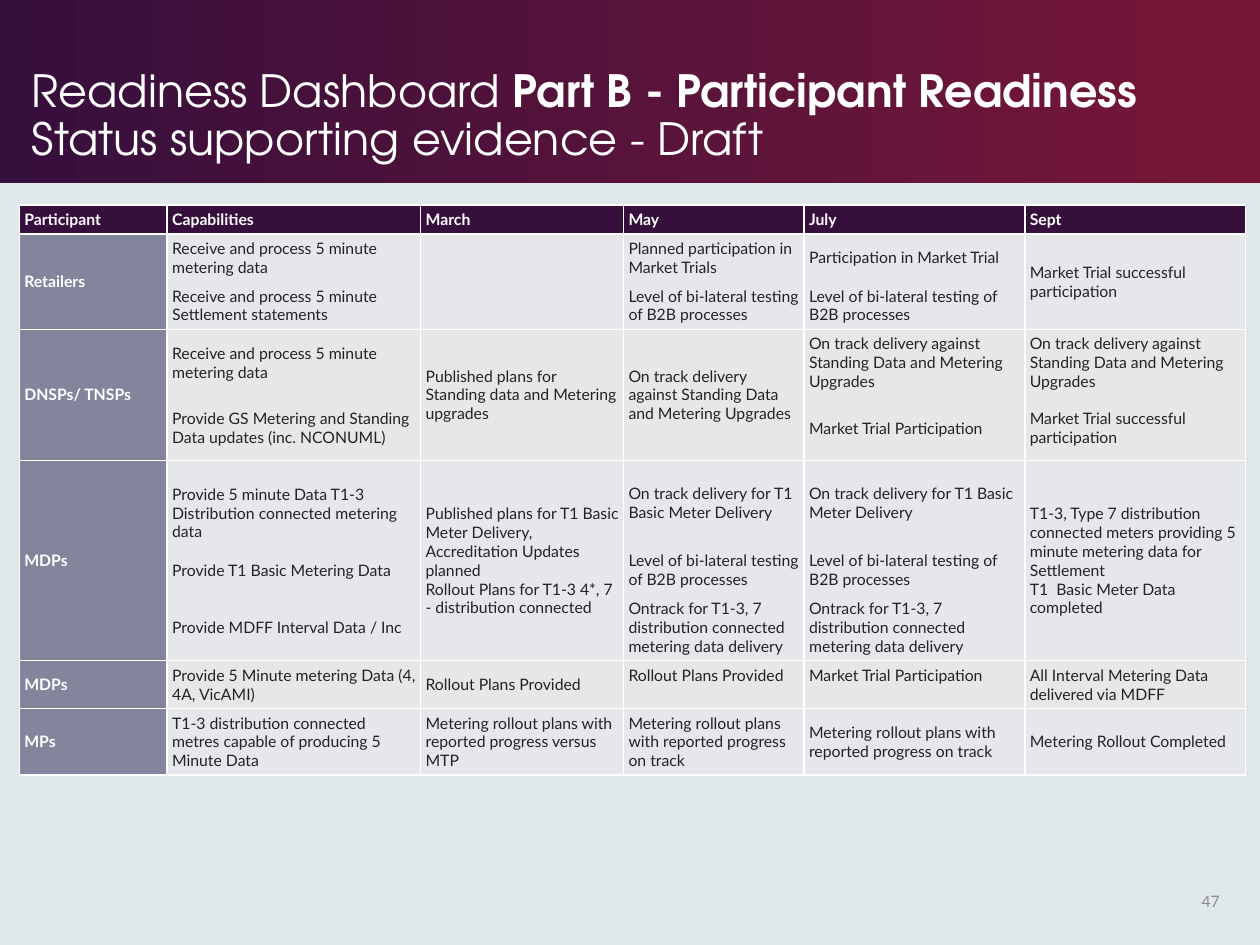
from lxml.etree import SubElement
from pptx import Presentation
from pptx.dml.color import RGBColor
from pptx.enum.shapes import MSO_SHAPE
from pptx.enum.text import MSO_ANCHOR, MSO_AUTO_SIZE, PP_ALIGN
from pptx.oxml.ns import qn
from pptx.util import Cm, Pt

WHITE = RGBColor(0xFF, 0xFF, 0xFF)
PAGE_COLOUR = RGBColor(0xE0, 0xE8, 0xEA)
PLUM = RGBColor(0x36, 0x0F, 0x3C)
CRIMSON = RGBColor(0x77, 0x17, 0x38)
SLATE = RGBColor(0x82, 0x85, 0x9C)
BAND_COLOURS = [RGBColor(0xE6, 0xE7, 0xEB), RGBColor(0xE8, 0xE7, 0xE8)]
INK = RGBColor(0x22, 0x23, 0x24)
GREY = RGBColor(0x8D, 0x8D, 0x8E)

TITLE_FONT = "TeX Gyre Adventor"
BODY_FONT = "Lato"

COLUMN_WIDTHS = [2.98, 5.11, 4.09, 3.64, 4.45, 4.45]
HEADINGS = ["Participant", "Capabilities", "March", "May", "July", "Sept"]

# Wording used in several cells
RECEIVE_METERING = "Receive and process 5 minute metering data"
BILATERAL = "Level of bi-lateral testing of B2B processes"
ON_TRACK = "On track delivery against Standing Data and Metering Upgrades"
BASIC_METER = "On track delivery for T1 Basic Meter Delivery"
ONTRACK_METERING = "Ontrack for T1-3, 7 distribution connected metering data delivery"
TRIAL_SUCCESS = "Market Trial successful participation"
TRIAL = "Market Trial Participation"
ROLLOUT = "Rollout Plans Provided"
PROGRESS = "Metering rollout plans with reported progress on track"

# Participant, row heights, and one list of texts per column;
# a single text spans all rows of its participant
GROUPS = [
    ("Retailers", [0.95, 0.95], [
        [RECEIVE_METERING, "Receive and process 5 minute Settlement statements"],
        [""],
        ["Planned participation in Market Trials", BILATERAL],
        ["Participation in Market Trial", BILATERAL],
        [TRIAL_SUCCESS],
    ]),
    ("DNSPs/ TNSPs", [1.34, 1.3], [
        [RECEIVE_METERING, "Provide GS Metering and Standing Data updates (inc. NCONUML)"],
        ["Published plans for Standing data and Metering upgrades"],
        [ON_TRACK],
        [ON_TRACK, TRIAL],
        [ON_TRACK, TRIAL_SUCCESS],
    ]),
    ("MDPs", [1.73, 0.95, 1.34], [
        ["Provide 5 minute Data T1-3 Distribution connected metering data",
         "Provide T1 Basic Metering Data", "Provide MDFF Interval Data / Inc"],
        ["Published plans for T1 Basic Meter Delivery, Accreditation Updates planned\v"
         "Rollout Plans for T1-3 4*, 7 - distribution connected"],
        [BASIC_METER, BILATERAL, ONTRACK_METERING],
        [BASIC_METER, BILATERAL, ONTRACK_METERING],
        ["T1-3, Type 7 distribution connected meters providing 5 minute metering data "
         "for Settlement\vT1  Basic Meter Data completed"],
    ]),
    ("MDPs", [0.95], [
        ["Provide 5 Minute metering Data (4, 4A, VicAMI)"],
        [ROLLOUT], [ROLLOUT], [TRIAL],
        ["All Interval Metering Data delivered via MDFF"],
    ]),
    ("MPs", [1.34], [
        ["T1-3 distribution connected metres capable of producing 5 Minute Data"],
        ["Metering rollout plans with reported progress versus MTP"],
        [PROGRESS], [PROGRESS],
        ["Metering Rollout Completed"],
    ]),
]

# Cells (row, column) that are not centred vertically
ANCHORS = {
    (5, 1): MSO_ANCHOR.BOTTOM,
    (7, 3): MSO_ANCHOR.TOP, (7, 4): MSO_ANCHOR.TOP,
    (8, 3): MSO_ANCHOR.TOP, (8, 4): MSO_ANCHOR.TOP,
}


def format_span(span, font_name, size, colour, bold=False):
    span.font.name = font_name
    span.font.size = Pt(size)
    span.font.color.rgb = colour
    span.font.bold = bold


def add_banner(page, width):
    banner = page.shapes.add_shape(MSO_SHAPE.RECTANGLE, 0, 0, width, Cm(3.69))
    banner.shadow.inherit = False
    banner.line.fill.background()
    banner.fill.gradient()
    banner.fill.gradient_angle = 0
    for stop, colour, position in zip(banner.fill.gradient_stops, (PLUM, CRIMSON), (0, 0.99)):
        stop.color.rgb = colour
        stop.position = position
    # Send behind the title
    page.shapes._spTree.insert(2, banner._element)


def fill_title(page):
    title = page.shapes.title
    title.left, title.top, title.width, title.height = Cm(0.38), Cm(1.12), Cm(23.27), Cm(2.34)
    frame = title.text_frame
    frame.auto_size = MSO_AUTO_SIZE.NONE
    frame.vertical_anchor = MSO_ANCHOR.BOTTOM
    para = frame.paragraphs[0]
    para.alignment = PP_ALIGN.LEFT
    para.line_spacing = 0.9
    for text, bold in (("Readiness Dashboard ", False), ("Part B - Participant Readiness", True)):
        span = para.add_run()
        span.text = text
        format_span(span, TITLE_FONT, 25.4, WHITE, bold)
    para.add_line_break()
    span = para.add_run()
    span.text = "Status supporting evidence - Draft"
    format_span(span, TITLE_FONT, 25.4, WHITE)


def set_borders(cell, top, bottom):
    """Draw white cell borders; a width of 0 hides that side."""
    properties = cell._tc.get_or_add_tcPr()
    sides = (("a:lnL", 1), ("a:lnR", 1), ("a:lnT", top), ("a:lnB", bottom))
    for index, (tag, width) in enumerate(sides):
        line = SubElement(properties, qn(tag), w=str(Pt(width)))
        if width:
            solid = SubElement(line, qn("a:solidFill"))
            SubElement(solid, qn("a:srgbClr"), val=str(WHITE))
        else:
            SubElement(line, qn("a:noFill"))
        properties.insert(index, line)


def style_cell(cell, fill, top=1, bottom=1):
    cell.margin_left = cell.margin_right = cell.margin_top = cell.margin_bottom = Cm(0.1)
    cell.vertical_anchor = MSO_ANCHOR.MIDDLE
    cell.fill.solid()
    cell.fill.fore_color.rgb = fill
    set_borders(cell, top, bottom)


def write_cell(cell, text, colour, bold=False):
    cell.text_frame.text = text
    for para in cell.text_frame.paragraphs:
        for span in para.runs:
            format_span(span, BODY_FONT, 9, colour, bold)


def fill_group(table, first, name, row_count, columns, band):
    """Fill the rows of one participant, merging the texts that span them."""
    last = first + row_count - 1
    for column, texts in enumerate([[name]] + columns):
        merged = len(texts) < row_count
        for row in range(first, last + 1):
            top = 1.5 if row == 1 else int(merged or row == first)
            bottom = int(merged or row == last)
            style_cell(table.cell(row, column), band if column else SLATE, top, bottom)
        if merged:
            table.cell(first, column).merge(table.cell(last, column))
        for row, text in enumerate(texts, first):
            write_cell(table.cell(row, column), text, INK if column else WHITE, column == 0)


def add_readiness_table(page):
    heights = [0.58] + [height for group in GROUPS for height in group[1]]
    table = page.shapes.add_table(len(heights), len(HEADINGS), Cm(0.39), Cm(4.13),
                                  Cm(sum(COLUMN_WIDTHS)), Cm(sum(heights))).table
    table.horz_banding = False
    for column, width in zip(table.columns, COLUMN_WIDTHS):
        column.width = Cm(width)
    for row, height in zip(table.rows, heights):
        row.height = Cm(height)

    # Heading row
    for column, heading in enumerate(HEADINGS):
        style_cell(table.cell(0, column), PLUM, bottom=1.5)
        write_cell(table.cell(0, column), heading, WHITE, True)

    # Participant rows
    first = 1
    for index, (name, group_heights, columns) in enumerate(GROUPS):
        fill_group(table, first, name, len(group_heights), columns, BAND_COLOURS[index % 2])
        first += len(group_heights)
    for position, anchor in ANCHORS.items():
        table.cell(*position).vertical_anchor = anchor


def add_page_number(page):
    box = page.shapes.add_textbox(Cm(23.65), Cm(17.65), Cm(1.19), Cm(1.02))
    frame = box.text_frame
    frame.word_wrap = True
    frame.vertical_anchor = MSO_ANCHOR.MIDDLE
    frame.text = "47"
    para = frame.paragraphs[0]
    para.alignment = PP_ALIGN.RIGHT
    format_span(para.runs[0], BODY_FONT, 9, GREY)


def main():
    deck = Presentation()
    deck.slide_width, deck.slide_height = Cm(25.4), Cm(19.05)
    page = deck.slides.add_slide(deck.slide_layouts[5])
    page.background.fill.solid()
    page.background.fill.fore_color.rgb = PAGE_COLOUR
    add_banner(page, deck.slide_width)
    fill_title(page)
    add_readiness_table(page)
    add_page_number(page)
    deck.save("out.pptx")


if __name__ == "__main__":
    main()
